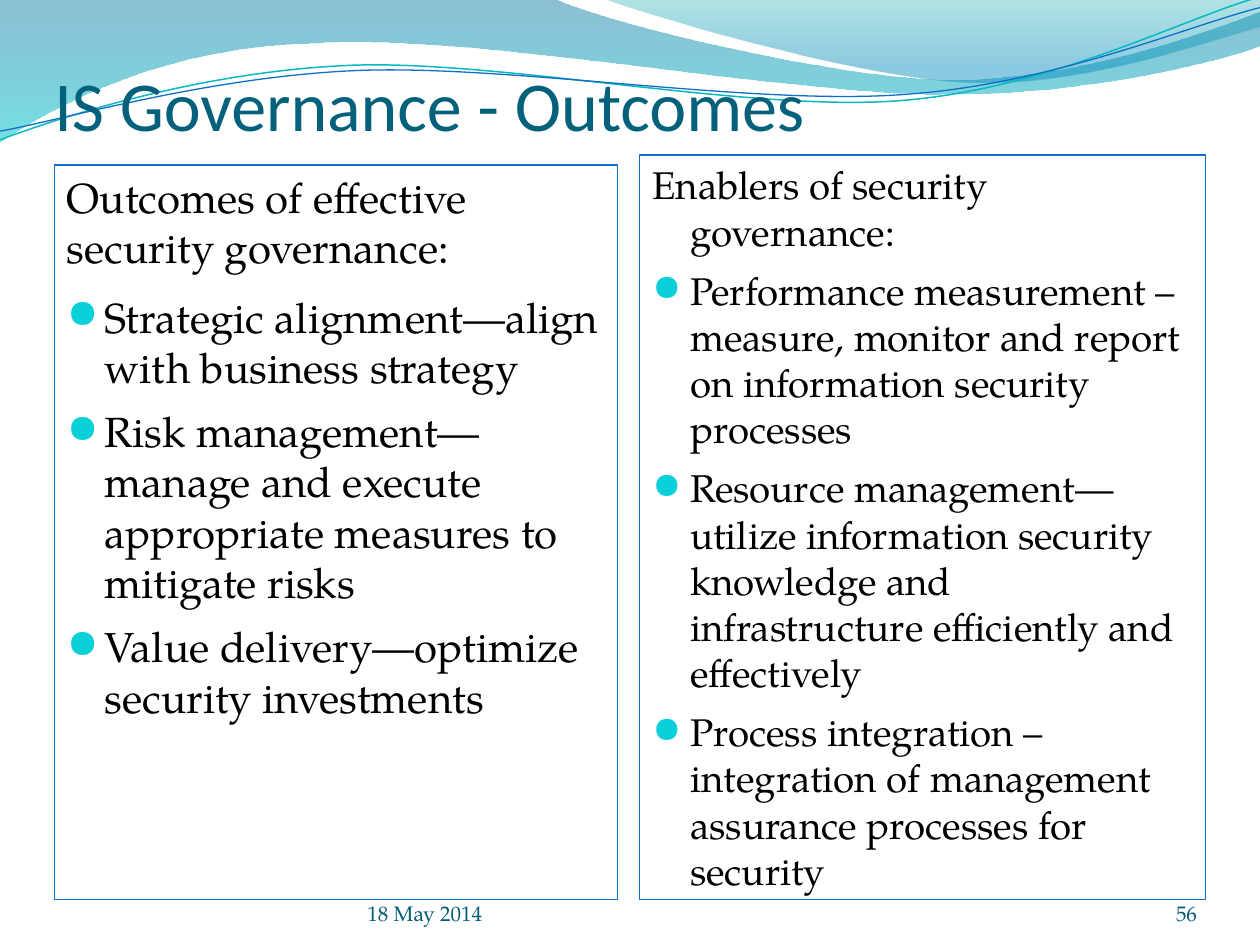
import dataclasses

import lxml.etree
import pptx
import pptx.dml.color
import pptx.enum.text
import pptx.oxml.ns
import pptx.util

Pt = pptx.util.Pt
RGB = pptx.dml.color.RGBColor.from_string
Align = pptx.enum.text.PP_ALIGN
Anchor = pptx.enum.text.MSO_ANCHOR
qn = pptx.oxml.ns.qn


@dataclasses.dataclass(frozen=True)
class Theme:
    title_font: str = "Calibri"
    text_font: str = "TeX Gyre Pagella"
    bullet_font: str = "OpenSymbol"
    title: str = "04617B"
    text: str = "000000"
    footer: str = "045D75"
    border: str = "0F6FC6"
    bullet: str = "0BD0D9"
    teal_line: str = "0AB8BF"
    # Gradient stops: position, colour, opacity in percent
    wide_wave: tuple = ((0, "0074A1", 45), (1, "00C6CF", 55))
    right_wave: tuple = ((0, "00A1A9", 30), (0.8, "008BBF", 45))
    title_size: int = 40
    left_size: int = 24
    right_size: int = 22
    footer_size: int = 12


THEME = Theme()

# Each step is a line end (one point) or a curve (two controls and an end)
WIDE_WAVE = [
    [(0, 0)], [(316.8, -0.7)],
    [(342.7, 12.2), (478.1, 45.4), (545.8, 45.4)],
    [(614.2, 45.4), (689.8, 18.7), (720, 6.5)],
    [(720.7, 25.9)],
    [(707.8, 31.7), (626.4, 54.7), (537.1, 54)],
    [(447.8, 54), (275, 20.2), (185, 24.5)],
    [(92.9, 25.9), (33.1, 59.8), (-0.7, 81.4)],
]
RIGHT_WAVE = [
    [(344.9, -0.7)],
    [(366.5, 7.9), (491, 44.6), (553.7, 46.8)],
    [(616.3, 49.7), (691.9, 23), (720, 15.1)],
    [(720, 0)],
]
TEAL_LINE = [
    [(0, 79.9)],
    [(34.6, 67), (113.8, 41), (199.4, 37.4)],
    [(284.4, 33.8), (427, 64.1), (513.4, 57.6)],
    [(599.8, 51.1), (675.4, 10.8), (718.6, -1.4)],
]
BLUE_LINE = [
    [(0, 74.9)],
    [(33.8, 69.1), (118.1, 43.9), (203.8, 40.3)],
    [(290.2, 36.7), (429.8, 60.5), (516.2, 54)],
    [(601.9, 48.2), (677.5, 15.1), (720, 4.3)],
]


def add_part(parent, tag, **values):
    return lxml.etree.SubElement(parent, qn(tag), **values)


def add_outline(page, steps, closed):
    """Build the outline from the step ends, then bend its curved steps."""
    ends = [(Pt(x), Pt(y)) for x, y in (step[-1] for step in steps)]
    builder = page.shapes.build_freeform(*ends[0])
    builder.add_line_segments(ends[1:], close=closed)
    shape = builder.convert_to_shape()
    shape.shadow.inherit = False
    segments = list(shape._element.spPr.iter(qn("a:lnTo")))
    for segment, step in zip(segments, steps[1:]):
        if len(step) == 3:
            curve = lxml.etree.Element(qn("a:cubicBezTo"))
            for x, y in step:
                add_part(curve, "a:pt", x=str(Pt(x) - shape.left), y=str(Pt(y) - shape.top))
            segment.getparent().replace(segment, curve)
    return shape


def add_wave(page, steps, stops):
    shape = add_outline(page, steps, True)
    shape.line.fill.background()
    shape.fill.gradient()
    shape.fill.gradient_angle = 270
    for stop, (position, colour, opacity) in zip(shape.fill.gradient_stops, stops):
        stop.position = position
        stop.color.rgb = RGB(colour)
    colours = list(shape._element.spPr.iter(qn("a:srgbClr")))
    for element, (position, colour, opacity) in zip(colours, stops):
        add_part(element, "a:alpha", val=str(opacity * 1000))


def add_curve(page, steps, colour, width):
    shape = add_outline(page, steps, False)
    shape.fill.background()
    shape.line.color.rgb = RGB(colour)
    shape.line.width = Pt(width)


def add_waves(page):
    add_wave(page, WIDE_WAVE, THEME.wide_wave)
    add_wave(page, RIGHT_WAVE, THEME.right_wave)
    add_curve(page, TEAL_LINE, THEME.teal_line, 0.85)
    add_curve(page, BLUE_LINE, THEME.border, 0.75)


def place(page, shape, box):
    """Move a placeholder to its box, in front of the waves."""
    shape.left, shape.top, shape.width, shape.height = (Pt(length) for length in box)
    page.shapes._spTree.append(shape._element)


def set_frame(shape, anchor, insets):
    frame = shape.text_frame
    frame.word_wrap = True
    frame.auto_size = pptx.enum.text.MSO_AUTO_SIZE.NONE
    frame.vertical_anchor = anchor
    (frame.margin_left, frame.margin_top,
     frame.margin_right, frame.margin_bottom) = (Pt(inset) for inset in insets)
    return frame


def add_span(para, text, font, size, colour):
    span = para.add_run()
    span.text = text
    span.font.name = font
    span.font.size = Pt(size)
    span.font.color.rgb = RGB(colour)


def set_bullet(para, indent, shown):
    properties = para._p.get_or_add_pPr()
    properties.set("marL", str(Pt(indent)))
    properties.set("indent", str(-Pt(indent)))
    if not shown:
        add_part(properties, "a:buNone")
        return
    add_part(add_part(properties, "a:buClr"), "a:srgbClr", val=THEME.bullet)
    add_part(properties, "a:buSzPct", val="95000")
    add_part(properties, "a:buFont", typeface=THEME.bullet_font)
    add_part(properties, "a:buChar", char="●")


def fill_title(page, box, text):
    shape = page.shapes.title
    place(page, shape, box)
    para = set_frame(shape, Anchor.BOTTOM, (0, 3.6, 0, 0)).paragraphs[0]
    para.alignment = Align.LEFT
    add_span(para, text, THEME.title_font, THEME.title_size, THEME.title)


def fill_column(page, shape, box, size, heading, items, heading_indent, heading_after):
    place(page, shape, box)
    shape.line.color.rgb = RGB(THEME.border)
    shape.line.width = Pt(0.75)
    frame = set_frame(shape, Anchor.TOP, (7.2, 3.6, 7.2, 3.6))
    for number, text in enumerate([heading, *items]):
        para = frame.add_paragraph() if number else frame.paragraphs[0]
        para.space_before = Pt(0.2 * size if number else 0)
        para.space_after = Pt(3 if number else heading_after)
        set_bullet(para, 21.6 if number else heading_indent, number > 0)
        add_span(para, text, THEME.text_font, size, THEME.text)


def add_footer(page, box, text, alignment):
    shape = page.shapes.add_textbox(*(Pt(length) for length in box))
    para = set_frame(shape, Anchor.BOTTOM, (0, 0, 0, 0)).paragraphs[0]
    para.alignment = alignment
    add_span(para, text, THEME.text_font, THEME.footer_size, THEME.footer)


def main():
    deck = pptx.Presentation()
    deck.slide_width, deck.slide_height = Pt(720), Pt(540)
    page = deck.slides.add_slide(deck.slide_layouts.get_by_name("Two Content"))
    left, right = page.placeholders[1], page.placeholders[2]
    add_waves(page)
    fill_title(page, (31, 20.9, 648, 62.5), "IS Governance - Outcomes")
    # Footer: date and page number
    add_footer(page, (210, 500.4, 264, 28.8), "18 May 2014", Align.LEFT)
    add_footer(page, (624, 500.4, 60, 28.8), "56", Align.RIGHT)
    # Columns
    fill_column(page, left, (31, 94.3, 322, 419.7), THEME.left_size,
                "Outcomes of effective security governance:", [
                    "Strategic alignment—align with business strategy",
                    "Risk management—manage and execute appropriate measures to mitigate risks",
                    "Value delivery—optimize security investments",
                ], heading_indent=0, heading_after=6)
    fill_column(page, right, (365.6, 88.6, 323.4, 425.4), THEME.right_size,
                "Enablers of security governance:", [
                    "Performance measurement – measure, monitor and report on "
                    "information security processes",
                    "Resource management—utilize information security knowledge and "
                    "infrastructure efficiently and effectively",
                    "Process integration – integration of management assurance "
                    "processes for security",
                ], heading_indent=21.6, heading_after=3)
    deck.save("out.pptx")


if __name__ == "__main__":
    main()
